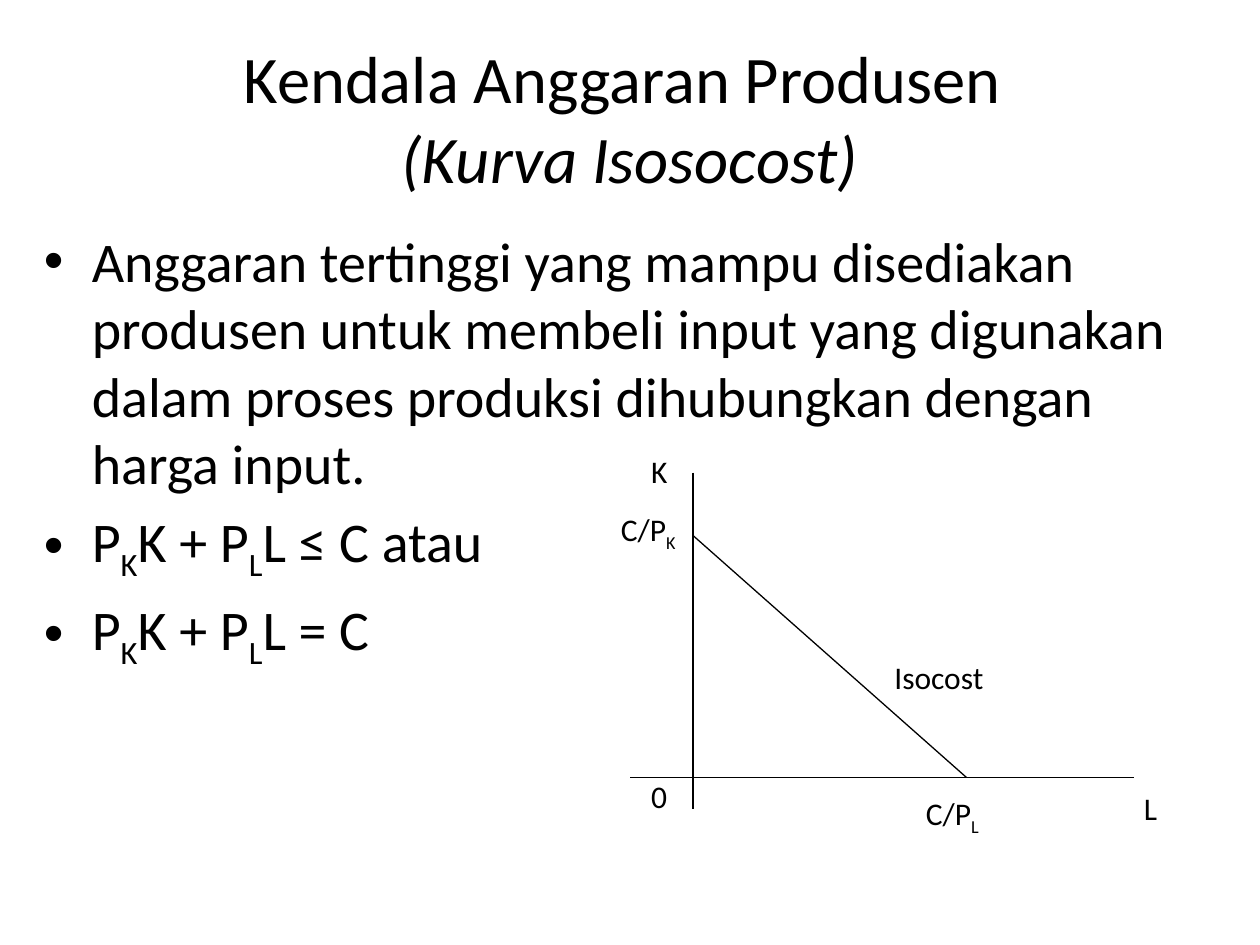
import pptx
import pptx.dml.color
import pptx.enum.shapes
import pptx.enum.text
import pptx.oxml
import pptx.oxml.ns
import pptx.util
from pptx.util import Inches

BLACK = pptx.dml.color.RGBColor(0, 0, 0)

presentation = pptx.Presentation()
presentation.slide_width = Inches(10)
presentation.slide_height = Inches(7.5)
slide = presentation.slides.add_slide(presentation.slide_layouts[6])


def add_text_frame(left, top, width, height, wrap=True):
    box = slide.shapes.add_textbox(Inches(left), Inches(top), Inches(width), Inches(height))
    box.text_frame.word_wrap = wrap
    return box.text_frame


def write_runs(paragraph, text, size):
    """Write text in black Calibri; parts between underscores become subscripts."""
    for index, part in enumerate(text.split("_")):
        run = paragraph.add_run()
        run.text = part
        run.font.name = "Calibri"
        run.font.size = pptx.util.Pt(size)
        run.font.color.rgb = BLACK
        if index % 2:
            run.font._element.set("baseline", "-25000")


# Title
title = add_text_frame(0.5, 0.3, 9, 1.25)
title.vertical_anchor = pptx.enum.text.MSO_ANCHOR.MIDDLE
heading = title.paragraphs[0]
heading.alignment = pptx.enum.text.PP_ALIGN.CENTER
write_runs(heading, "Kendala Anggaran Produsen ", 38)
heading.add_line_break()
write_runs(heading, "(Kurva Isosocost)", 38)
heading.runs[-1].font.italic = True

# Bullets
points = [
    "Anggaran tertinggi yang mampu disediakan produsen untuk membeli input "
    "yang digunakan dalam proses produksi dihubungkan dengan harga input.",
    "P_K_K + P_L_L ≤ C atau",
    "P_K_K + P_L_L = C",
]
body = add_text_frame(0.25, 1.75, 9.25, 4.95)
for index, point in enumerate(points):
    paragraph = body.paragraphs[0] if index == 0 else body.add_paragraph()
    write_runs(paragraph, point, 32)
    paragraph.space_before = pptx.util.Pt(6.4)
    properties = paragraph._p.get_or_add_pPr()
    properties.set("marL", str(Inches(0.38)))
    properties.set("indent", str(Inches(-0.38)))
    for tag, attribute, value in [("buFont", "typeface", "Arial"), ("buChar", "char", "•")]:
        bullet = pptx.oxml.ns.qn(f"a:{tag}")
        properties.makeelement(bullet)
        pptx.oxml.xmlchemy.OxmlElement(f"a:{tag}")
        element = pptx.oxml.xmlchemy.OxmlElement(f"a:{tag}")
        element.set(attribute, value)
        properties.append(element)

# Isocost diagram
origin_x, origin_y = 5.5, 6.17
diagram_lines = [
    (origin_x, 3.75, origin_x, 6.42),  # K axis
    (5, origin_y, 9, origin_y),  # L axis
    (origin_x, 4.25, 7.67, origin_y),  # isocost
]
for ends in diagram_lines:
    line = slide.shapes.add_connector(
        pptx.enum.shapes.MSO_CONNECTOR.STRAIGHT, *[Inches(end) for end in ends]
    )
    line.line.color.rgb = BLACK
    line.line.width = pptx.util.Pt(0.75)
    line._element.spPr.append(pptx.oxml.xmlchemy.OxmlElement("a:effectLst"))

labels = [
    ("K", 5.07, 3.54, 0.37),
    ("L", 8.98, 6.21, 0.34),
    ("C/P_K_", 4.83, 4, 0.73),
    ("C/P_L_", 7.25, 6.25, 0.71),
    ("0", 5.07, 6.12, 0.34),
    ("Isocost", 7, 5.17, 0.99),
]
for text, left, top, width in labels:
    label = add_text_frame(left, top, width, 0.4, wrap=False)
    write_runs(label.paragraphs[0], text.removesuffix("_"), 18)

presentation.save("out.pptx")
